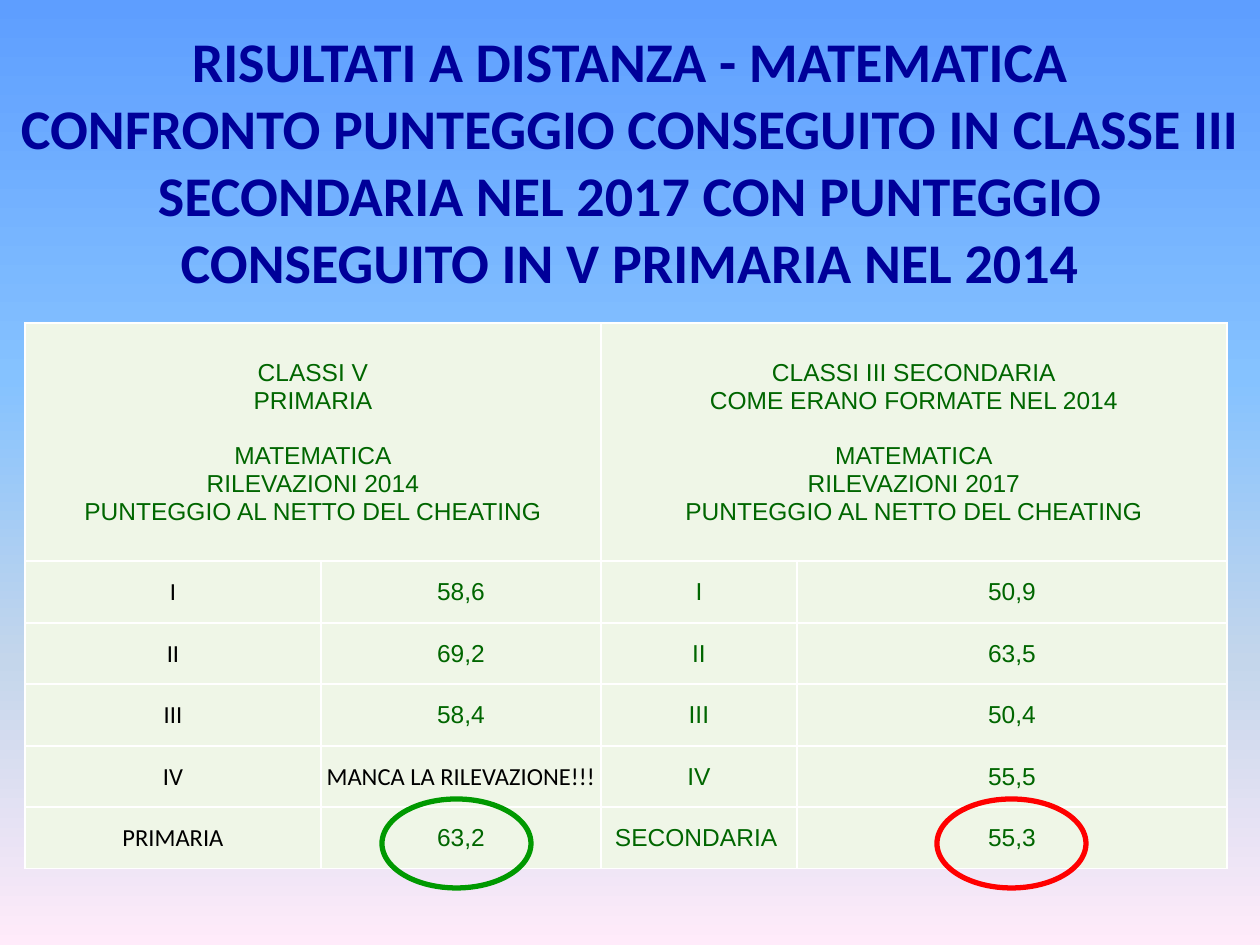
from dataclasses import dataclass
from lxml.etree import SubElement
from pptx import Presentation
from pptx.dml.color import RGBColor
from pptx.enum.shapes import MSO_SHAPE as Shape
from pptx.enum.text import MSO_ANCHOR as Anchor, MSO_AUTO_SIZE as AutoSize, PP_ALIGN as Align
from pptx.oxml.ns import qn
from pptx.util import Emu, Pt

EMU_PER_PX = 914400 / 126
GREEN, BLACK, WHITE, CELL_FILL = "006600", "000000", "FFFFFF", "EFF6E7"
NAVY = "000099"


@dataclass
class Style:
    font: str
    color: str
    size: int = 14
    bold: bool = False


@dataclass
class Ring:
    left: int
    color: str


TITLE = Style("Calibri", NAVY, 32, True)
VALUE = Style("Arial", GREEN)
LABEL = Style("Calibri", BLACK)

TITLE_LINES = [
    "RISULTATI A DISTANZA - MATEMATICA",
    "CONFRONTO PUNTEGGIO CONSEGUITO IN CLASSE III SECONDARIA NEL 2017 "
    "CON PUNTEGGIO CONSEGUITO IN V PRIMARIA NEL 2014",
]
HEADERS = [
    ["CLASSI V", "PRIMARIA", "MATEMATICA\vRILEVAZIONI 2014",
     "PUNTEGGIO AL NETTO DEL CHEATING"],
    ["CLASSI III SECONDARIA", "COME ERANO FORMATE NEL 2014",
     "MATEMATICA\vRILEVAZIONI 2017", "PUNTEGGIO AL NETTO DEL CHEATING"],
]
MISSING = "MANCA LA RILEVAZIONE!!!"
ROWS = [
    ["I", "58,6", "I", "50,9"],
    ["II", "69,2", "II", "63,5"],
    ["III", "58,4", "III", "50,4"],
    ["IV", MISSING, "IV", "55,5"],
    ["PRIMARIA", "63,2", "SECONDARIA ", "55,3"],
]
COL_WIDTHS = [296, 280, 196, 430]
ROW_HEIGHTS = [238, 62, 61, 62, 61, 62]
SKY = [(0, "5E9EFF"), (40, "85C2FF"), (70, "C4D6EB"), (100, "FFEBFA")]
RINGS = [Ring(382, "009900"), Ring(937, "FF0000")]


def px(n: int) -> Emu:
    return Emu(round(n * EMU_PER_PX))


def rgb(color: str) -> RGBColor:
    return RGBColor.from_string(color)


def write(tf, lines: list[str], style: Style) -> None:
    for i, line in enumerate(lines):
        p = tf.paragraphs[0] if i == 0 else tf.add_paragraph()
        p.text = line
        p.alignment = Align.CENTER
        for r in p.runs:
            r.font.name = style.font
            r.font.size = Pt(style.size)
            r.font.bold = style.bold
            r.font.color.rgb = rgb(style.color)


def paint_background(s) -> None:
    fill = s.background.fill
    fill.gradient()
    fill.gradient_angle = 270
    stops = next(s.element.iter(qn("a:gsLst")))
    for stop in list(stops):
        stops.remove(stop)
    for percent, color in SKY:
        stop = SubElement(stops, qn("a:gs"), pos=str(percent * 1000))
        SubElement(stop, qn("a:srgbClr"), val=color)


def add_title(s) -> None:
    sp = s.shapes.title
    sp.left, sp.top, sp.width, sp.height = px(0), px(20), px(1260), px(195)
    tf = sp.text_frame
    tf.word_wrap = True
    tf.auto_size = AutoSize.NONE
    tf.vertical_anchor = Anchor.TOP
    write(tf, TITLE_LINES, TITLE)


def format_cell(cell) -> None:
    cell.vertical_anchor = Anchor.MIDDLE
    cell.margin_left = cell.margin_right = cell.margin_top = px(1)
    cell.margin_bottom = 0
    tc_pr = cell._tc.get_or_add_tcPr()
    for side in ("lnL", "lnR", "lnT", "lnB"):
        ln = SubElement(tc_pr, qn(f"a:{side}"), w=str(Pt(1)))
        solid = SubElement(ln, qn("a:solidFill"))
        SubElement(solid, qn("a:srgbClr"), val=WHITE)
    cell.fill.solid()
    cell.fill.fore_color.rgb = rgb(CELL_FILL)


def add_scores(s) -> None:
    table = s.shapes.add_table(
        len(ROW_HEIGHTS), len(COL_WIDTHS), px(25), px(323),
        px(sum(COL_WIDTHS)), px(sum(ROW_HEIGHTS))).table
    table.first_row = table.horz_banding = False
    for column, width in zip(table.columns, COL_WIDTHS):
        column.width = px(width)
    for row, height in zip(table.rows, ROW_HEIGHTS):
        row.height = px(height)
    for cell in table.iter_cells():
        format_cell(cell)
    for i, lines in enumerate(HEADERS):
        cell = table.cell(0, 2 * i)
        cell.merge(table.cell(0, 2 * i + 1))
        write(cell.text_frame, lines, VALUE)
        cell.text_frame.paragraphs[2].space_before = Pt(16)
    for i, row in enumerate(ROWS, start=1):
        for j, text in enumerate(row):
            style = LABEL if j == 0 or text == MISSING else VALUE
            write(table.cell(i, j).text_frame, [text], style)


def add_ring(s, ring: Ring) -> None:
    sp = s.shapes.add_shape(Shape.OVAL, px(ring.left), px(799), px(149), px(89))
    sp.shadow.inherit = False
    sp.fill.background()
    sp.line.color.rgb = rgb(ring.color)
    sp.line.width = Pt(3)


def main() -> None:
    prs = Presentation()
    prs.slide_width, prs.slide_height = px(1260), px(945)
    s = prs.slides.add_slide(prs.slide_layouts[5])
    paint_background(s)
    add_title(s)
    add_scores(s)
    for ring in RINGS:
        add_ring(s, ring)
    prs.save("out.pptx")


if __name__ == "__main__":
    main()
